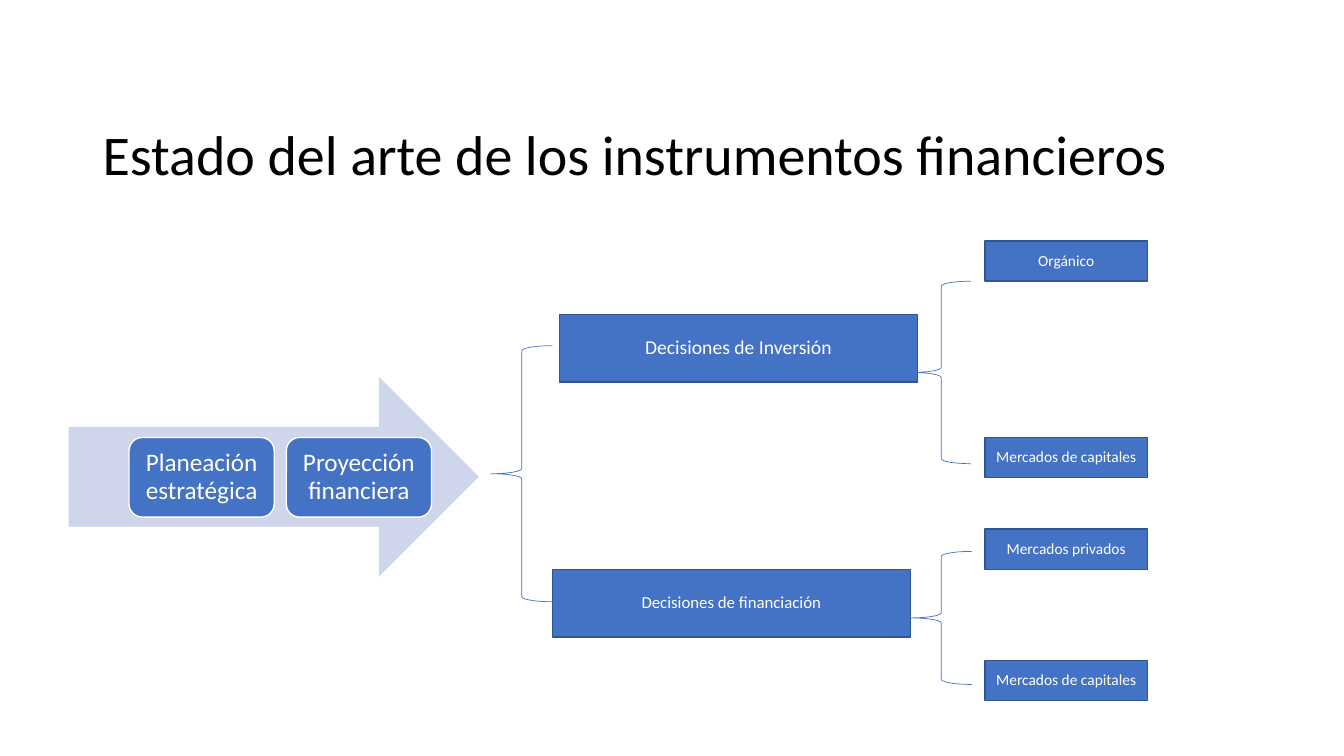
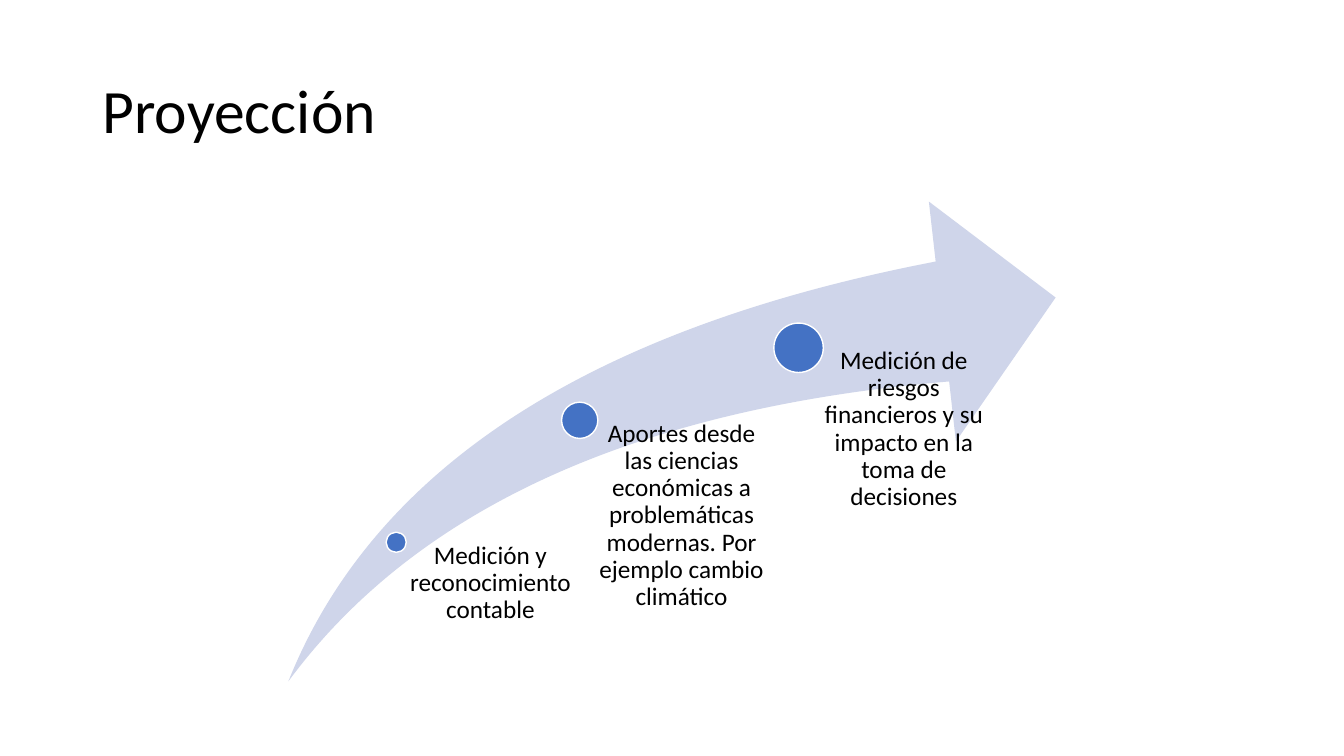
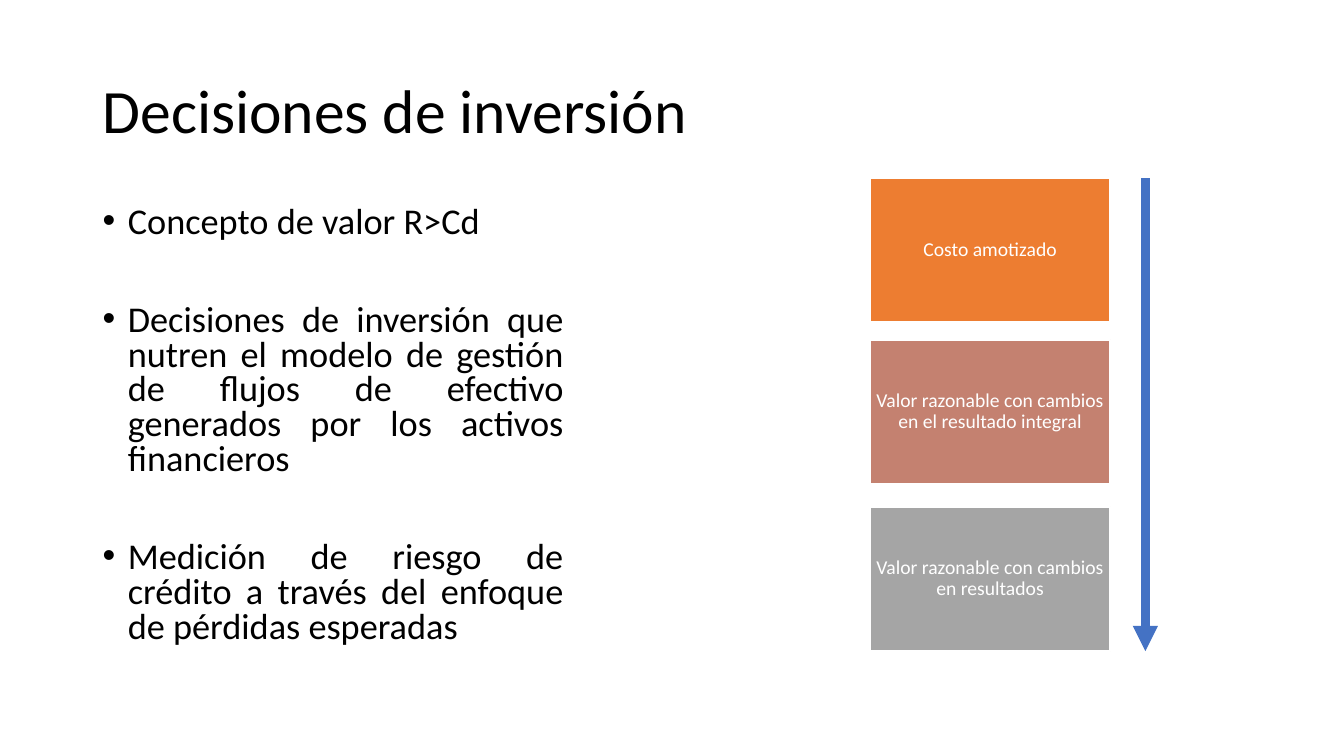
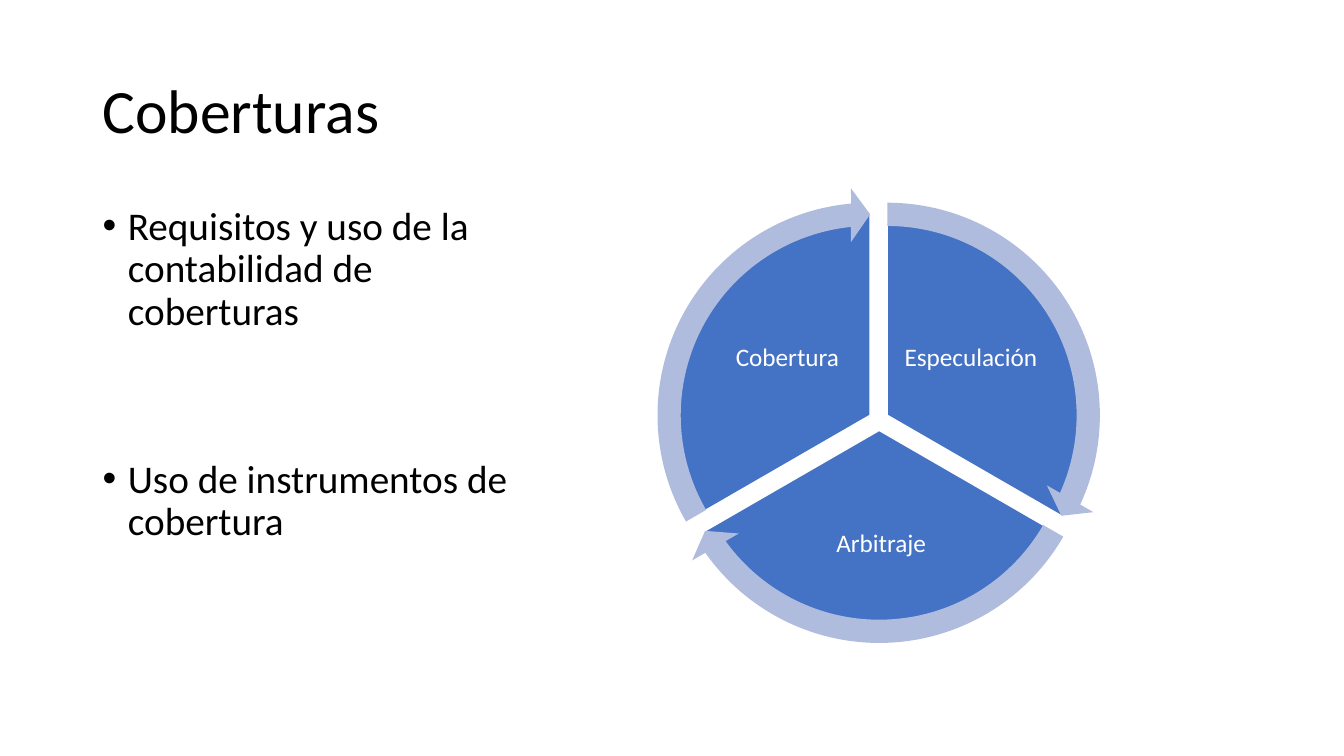
"""Build four slides on financial instruments."""
from lxml.etree import SubElement as Sub
from pptx import Presentation
from pptx.dml.color import RGBColor
from pptx.enum.shapes import MSO_CONNECTOR as Link, MSO_SHAPE as Kind
from pptx.enum.text import MSO_ANCHOR as Anchor, PP_ALIGN as Align
from pptx.oxml.ns import qn
from pptx.util import Inches, Pt

FONT = "Calibri"
BLACK = RGBColor(0x00, 0x00, 0x00)
WHITE = RGBColor(0xFF, 0xFF, 0xFF)
BLUE = RGBColor(0x44, 0x72, 0xC4)
NAVY = RGBColor(0x32, 0x54, 0x91)
PALE = RGBColor(0xCF, 0xD5, 0xEA)
HAZE = RGBColor(0xB0, 0xBC, 0xDE)
ORANGE = RGBColor(0xED, 0x7D, 0x31)
ROSE = RGBColor(0xC4, 0x81, 0x70)
GREY = RGBColor(0xA5, 0xA5, 0xA5)


def style(par, size, color, align, lead=0.9):
    par.alignment = align
    par.line_spacing = lead
    for run in par.runs:
        run.font.name = FONT
        run.font.size = Pt(size)
        run.font.color.rgb = color


def write(shape, text, size, color=WHITE, align=Align.CENTER,
          anchor=Anchor.MIDDLE, pads=(0.1, 0.05, 0.1, 0.05)):
    frame = shape.text_frame
    frame.word_wrap = True
    frame.vertical_anchor = anchor
    (frame.margin_left, frame.margin_top,
     frame.margin_right, frame.margin_bottom) = map(Inches, pads)
    frame.text = text
    style(frame.paragraphs[0], size, color, align)


def add_text(slide, area, text, size, **look):
    box = slide.shapes.add_textbox(*map(Inches, area))
    write(box, text, size, **look)


def add_form(slide, kind, area, fill=None, line=None, width=1, adjust=()):
    shape = slide.shapes.add_shape(kind, *map(Inches, area))
    shape.shadow.inherit = False
    if fill is None:
        shape.fill.background()
    else:
        shape.fill.solid()
        shape.fill.fore_color.rgb = fill
    if line is None:
        shape.line.fill.background()
    else:
        shape.line.color.rgb = line
        shape.line.width = Pt(width)
    for i, value in enumerate(adjust):
        shape.adjustments[i] = value
    return shape


def add_arrow(slide, x, top, end):
    arrow = slide.shapes.add_connector(
        Link.STRAIGHT, Inches(x), Inches(top), Inches(x), Inches(end))
    arrow.line.color.rgb = BLUE
    arrow.line.width = Pt(6)
    Sub(arrow.line._get_or_add_ln(), qn("a:tailEnd"), type="triangle")
    Sub(arrow._element.spPr, qn("a:effectLst"))


def add_list(slide, width, items, size, gap, align, lead):
    area = (0.92, 2, width, 4.76)
    frame = slide.shapes.add_textbox(*map(Inches, area)).text_frame
    frame.word_wrap = True
    frame.text = "\n".join(items)
    for i, par in enumerate(frame.paragraphs):
        props = par._p.get_or_add_pPr()
        props.set("marL", str(Inches(0.25)))
        props.set("indent", str(Inches(-0.25)))
        Sub(props, qn("a:buFont"), typeface="Arial")
        Sub(props, qn("a:buChar"), char="•")
        style(par, size, BLACK, align, lead)
        if i:
            par.space_before = Pt(gap)


def new_slide(deck, title, top=0.4, size=44):
    slide = deck.slides.add_slide(deck.slide_layouts[6])
    add_text(slide, (0.92, top, 11.5, 1.45), title, size,
             color=BLACK, align=Align.LEFT)
    return slide


def state(deck):
    slide = new_slide(deck, "Estado del arte de los instrumentos financieros",
                      0.84, 40)
    add_form(slide, Kind.RIGHT_ARROW, (0.68, 3.74, 4.07, 1.98), PALE)
    steps = ("Planeación estratégica", "Proyección financiera")
    for i, text in enumerate(steps):
        step = add_form(slide, Kind.ROUNDED_RECTANGLE,
                        (1.28 + 1.56 * i, 4.34, 1.44, 0.79), BLUE, WHITE)
        write(step, text, 18, pads=(0.11,) * 4)
    large, small = (3.55, 0.67), (1.61, 0.4)
    for x, y, extent, text, size in (
            (5.55, 3.12, large, "Decisiones de Inversión", 14),
            (5.48, 5.65, large, "Decisiones de financiación", 12),
            (9.77, 2.39, small, "Orgánico", 11),
            (9.77, 4.34, small, "Mercados de capitales", 11),
            (9.77, 5.25, small, "Mercados privados", 11),
            (9.77, 6.55, small, "Mercados de capitales", 11)):
        box = add_form(slide, Kind.RECTANGLE, (x, y, *extent), BLUE, NAVY)
        write(box, text, size)
    for area in ((4.87, 3.43, 0.61, 2.54), (9.04, 2.79, 0.59, 1.81),
                 (9.03, 5.47, 0.61, 1.32)):
        add_form(slide, Kind.LEFT_BRACE, area, line=BLUE, width=0.5)


def outlook(deck):
    slide = new_slide(deck, "Proyección")
    add_form(slide, Kind.SWOOSH_ARROW, (2.86, 2, 7.61, 4.76), PALE,
             adjust=(0.25, 0.25))
    base = 6.76
    for x, y, dot, width, pad, text in (
            (3.93, 5.38, 0.2, 1.77, 0.1, "Medición y reconocimiento contable"),
            (5.75, 4.17, 0.36, 1.83, 0.19,
             "Aportes desde las ciencias económicas a problemáticas modernas. "
             "Por ejemplo cambio climático"),
            (7.92, 3.45, 0.49, 1.83, 0.26,
             "Medición de riesgos financieros y su impacto en la toma de "
             "decisiones")):
        add_form(slide, Kind.OVAL, (x - dot / 2, y - dot / 2, dot, dot),
                 BLUE, WHITE)
        add_text(slide, (x, y, width, base - y), text, 18, color=BLACK,
                 anchor=Anchor.TOP, pads=(pad, 0, 0, 0))


def invest(deck):
    slide = new_slide(deck, "Decisiones de inversión")
    add_list(slide, 4.77, (
        "Concepto de valor R>Cd",
        "Decisiones de inversión que nutren el modelo de gestión de flujos de "
        "efectivo generados por los activos financieros",
        "Medición de riesgo de crédito a través del enfoque de pérdidas "
        "esperadas"), 25.9, 45, Align.JUSTIFY, 0.8)
    for y, fill, text in (
            (1.77, ORANGE, "Costo amotizado"),
            (3.37, ROSE,
             "Valor razonable con cambios en el resultado integral"),
            (5.03, GREY, "Valor razonable con cambios en resultados")):
        box = add_form(slide, Kind.RECTANGLE, (8.63, y, 2.38, 1.43),
                       fill, WHITE, 1.5)
        write(box, text, 14, pads=(0.06,) * 4)
    add_arrow(slide, 11.36, 1.77, 6.46)


def hedge(deck):
    slide = new_slide(deck, "Coberturas")
    add_list(slide, 4.51, (
        "Requisitos y uso de la contabilidad de coberturas",
        "Uso de instrumentos de cobertura"), 28, 90, Align.LEFT, 0.9)
    parts = (
        (8.8, 4.12, 162, 18, "Especulación", (8.91, 2.96, 1.44, 1.2)),
        (8.72, 4.27, 18, 90, "Arbitraje", (7.66, 4.87, 2.16, 1.05)),
        (8.63, 4.12, 90, 162, "Cobertura", (7.09, 2.96, 1.44, 1.2)))
    pie, ring, head = 4.02, 4.52, 3.275
    for x, y, start, end, text, area in parts:
        add_form(slide, Kind.PIE, (x - pie / 2, y - pie / 2, pie, pie),
                 BLUE, WHITE, adjust=(start, end))
        add_text(slide, area, text, 18, pads=(0.03,) * 4)
    for x, y, start, end, *_ in parts:
        add_form(slide, Kind.CIRCULAR_ARROW,
                 (x - ring / 2, y - ring / 2, ring, ring), HAZE,
                 adjust=(0.051, head, end - head, start, 0.059))


def main():
    deck = Presentation()
    deck.slide_width = Inches(13.33)
    deck.slide_height = Inches(7.5)
    for build in (state, outlook, invest, hedge):
        build(deck)
    deck.save("out.pptx")


if __name__ == "__main__":
    main()
